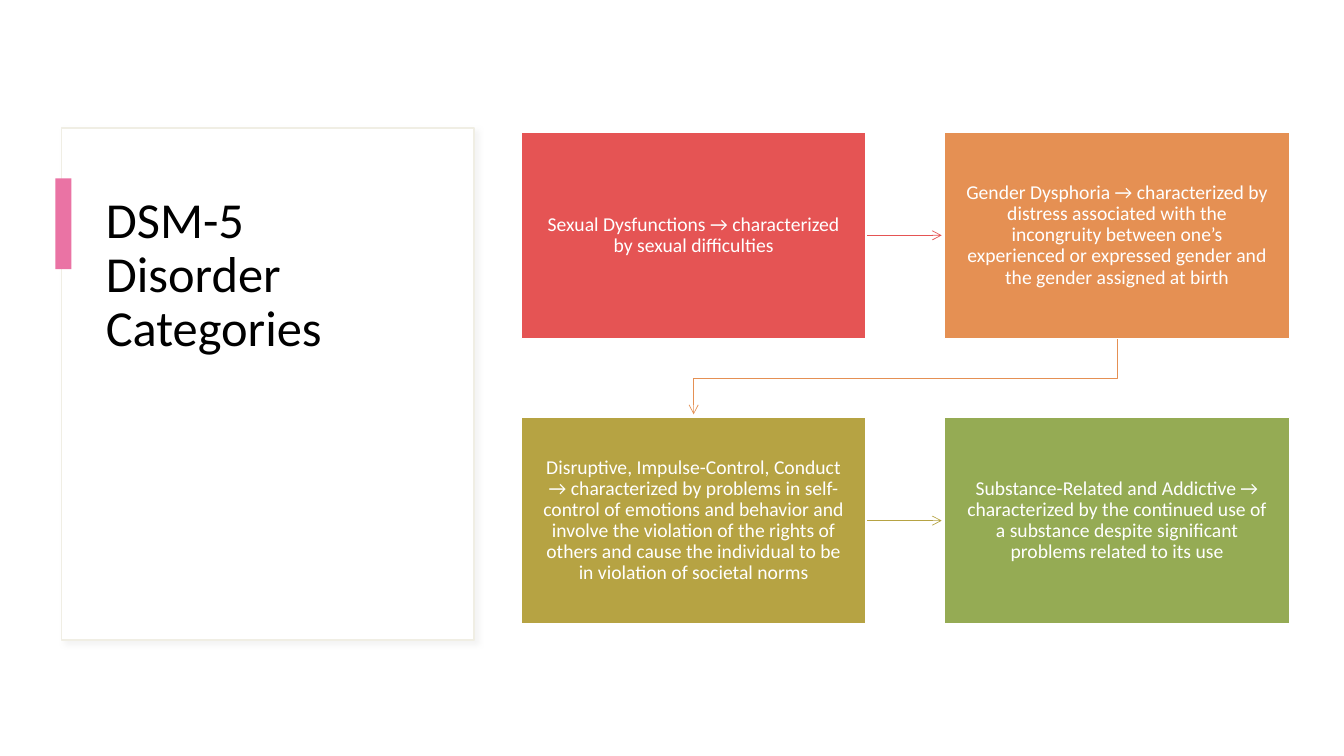
from lxml import etree
from pptx import Presentation
from pptx import util as u
from pptx.dml.color import RGBColor
from pptx.enum import shapes, text
from pptx.oxml import parse_xml
from pptx.oxml.ns import nsdecls, qn

TITLE = "DSM-5 Disorder Categories"
CATEGORIES = [
    ("Sexual Dysfunctions → characterized by sexual difficulties", "E55454"),
    ("Gender Dysphoria → characterized by distress associated with the incongruity between "
     "one’s experienced or expressed gender and the gender assigned at birth", "E59053"),
    ("Disruptive, Impulse-Control, Conduct → characterized by problems in self-control of "
     "emotions and behavior and involve the violation of the rights of others and cause the "
     "individual to be in violation of societal norms", "B6A343"),
    ("Substance-Related and Addictive → characterized by the continued use of a substance "
     "despite significant problems related to its use", "95AB54"),
]
THEME = {
    "font": "Calibri", "title_size": 36, "body_size": 14,
    "ink": "000000", "paper": "FFFFFF", "accent": "EA73A4",
    "edge": "F0EEE4", "shadow": "D9D9D9", "edge_width": 1, "arrow_width": 0.5,
}
CARD = (0.61, 1.27, 4.09, 5.08)
TITLE_BOX = (0.95, 1.88, 3.39, 3.85)
ACCENT_BAR = (0.55, 1.77, 0.16, 0.9)
GRID_LEFT, GRID_TOP, COLUMNS = 5.17, 1.31, 2
BOX_W, BOX_H = 3.42, 2.05
STEP_X, STEP_Y = 4.2, 2.83
ARROW_GAP = 0.03


def rgb(name):
    return RGBColor.from_string(THEME.get(name, name))


def set_all(target, values):
    for name, value in values.items():
        setattr(target, name, value)


def add_rect(slide, box, fill, line=None):
    s = slide.shapes.add_shape(shapes.MSO_SHAPE.RECTANGLE, *map(u.Inches, box))
    s.shadow.inherit = False
    s.fill.solid()
    s.fill.fore_color.rgb = rgb(fill)
    if line:
        s.line.color.rgb = rgb(line)
        s.line.width = u.Pt(THEME["edge_width"])
    else:
        s.line.fill.background()
    return s


def add_shadow(s):
    effects = s._element.spPr.find(qn("a:effectLst"))
    effects.append(parse_xml(
        f'<a:outerShdw {nsdecls("a")} blurRad="{u.Pt(4)}" dist="{u.Pt(3)}" dir="2700000">'
        f'<a:srgbClr val="{THEME["shadow"]}"><a:alpha val="30000"/></a:srgbClr></a:outerShdw>'))


def write(s, words, size, color, align, anchor, margins):
    tf = s.text_frame
    set_all(tf, {"word_wrap": True, "auto_size": text.MSO_AUTO_SIZE.NONE,
                 "vertical_anchor": anchor, **margins})
    p = tf.paragraphs[0]
    set_all(p, {"alignment": align, "line_spacing": 0.9})
    r = p.add_run()
    r.text = words
    set_all(r.font, {"name": THEME["font"], "size": u.Pt(THEME[size])})
    r.font.color.rgb = rgb(color)


def add_arrow(slide, points, color):
    points = [(u.Inches(x), u.Inches(y)) for x, y in points]
    if len(points) == 2:
        s = slide.shapes.add_connector(shapes.MSO_CONNECTOR.STRAIGHT, *points[0], *points[1])
        etree.SubElement(s._element.spPr, qn("a:effectLst"))
    else:
        route = slide.shapes.build_freeform(*points[0])
        route.add_line_segments(points[1:], close=False)
        s = route.convert_to_shape()
        s.shadow.inherit = False
        s.fill.background()
    s.line.color.rgb = rgb(color)
    s.line.width = u.Pt(THEME["arrow_width"])
    etree.SubElement(s.line._get_or_add_ln(), qn("a:tailEnd"), type="arrow")


def box_at(index):
    row, column = divmod(index, COLUMNS)
    return GRID_LEFT + column * STEP_X, GRID_TOP + row * STEP_Y


def arrow_route(index):
    x, y = box_at(index)
    next_x, next_y = box_at(index + 1)
    if next_y == y:
        middle = y + BOX_H / 2
        return [(x + BOX_W, middle), (next_x - ARROW_GAP, middle)]
    start, end = x + BOX_W / 2, next_x + BOX_W / 2
    turn = (y + BOX_H + next_y) / 2
    return [(start, y + BOX_H), (start, turn), (end, turn), (end, next_y - ARROW_GAP)]


def main():
    prs = Presentation()
    set_all(prs, {"slide_width": u.Inches(13.33), "slide_height": u.Inches(7.5)})
    slide = prs.slides.add_slide(prs.slide_layouts[5])

    add_shadow(add_rect(slide, CARD, "paper", "edge"))

    title = slide.shapes.title
    set_all(title, dict(zip(("left", "top", "width", "height"), map(u.Inches, TITLE_BOX))))
    write(title, TITLE, "title_size", "ink", text.PP_ALIGN.LEFT, text.MSO_ANCHOR.TOP, {})
    slide.shapes._spTree.append(title._element)
    add_rect(slide, ACCENT_BAR, "accent")

    margins = {"margin_left": u.Inches(0.17), "margin_right": u.Inches(0.17),
               "margin_top": u.Inches(0.18), "margin_bottom": u.Inches(0.18)}
    for i, (words, color) in enumerate(CATEGORIES):
        if i + 1 < len(CATEGORIES):
            add_arrow(slide, arrow_route(i), color)
        s = add_rect(slide, (*box_at(i), BOX_W, BOX_H), color, "paper")
        write(s, words, "body_size", "paper", text.PP_ALIGN.CENTER,
              text.MSO_ANCHOR.MIDDLE, margins)

    prs.save("out.pptx")


if __name__ == "__main__":
    main()
